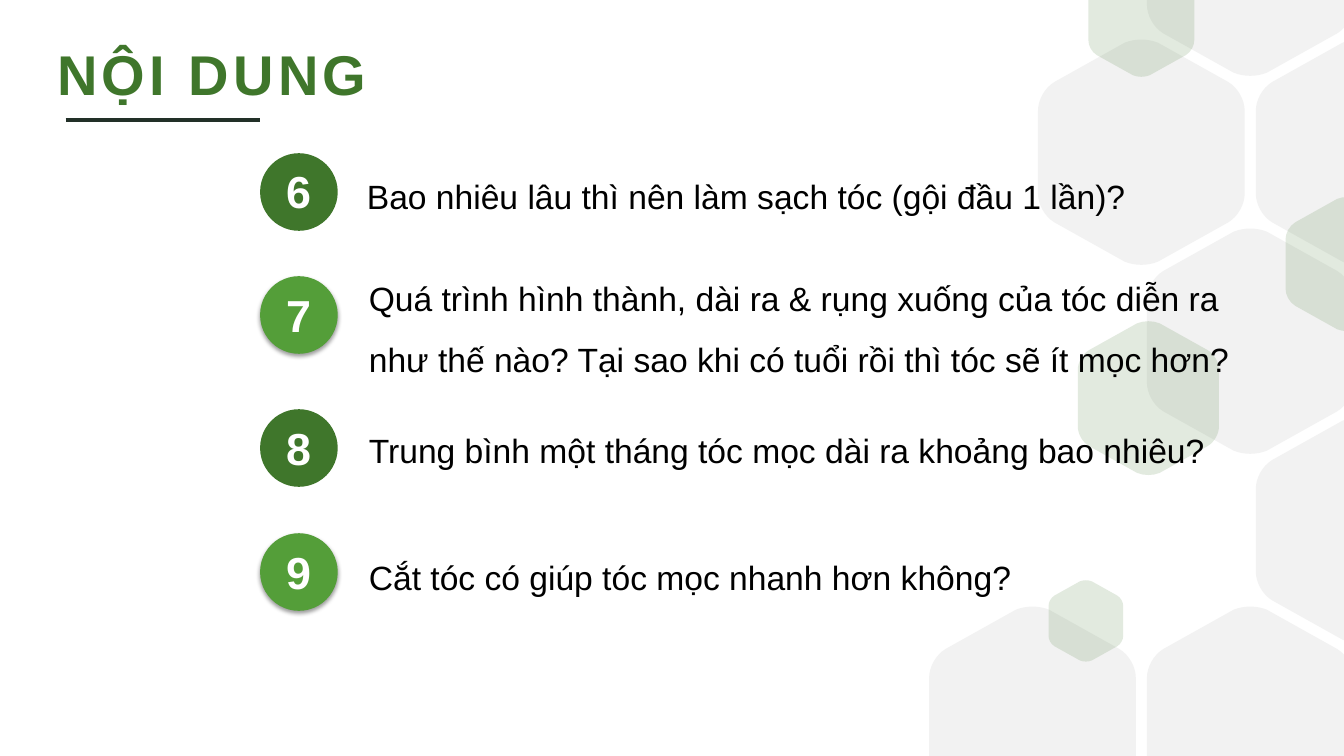
from dataclasses import dataclass

from lxml import etree
from pptx import Presentation
from pptx.dml.color import RGBColor
from pptx.enum.shapes import MSO_CONNECTOR, MSO_SHAPE
from pptx.enum.text import MSO_AUTO_SIZE
from pptx.oxml.ns import qn
from pptx.util import Inches, Pt

OVAL = MSO_SHAPE.OVAL
LINE = MSO_CONNECTOR.STRAIGHT
GROW = MSO_AUTO_SIZE.SHAPE_TO_FIT_TEXT


@dataclass(frozen=True)
class Theme:
    font: str = "Arial"
    dark: str = "3F762B"
    light: str = "549E39"
    rule: str = "223028"
    gray: str = "F2F2F2"
    white: str = "FFFFFF"
    black: str = "000000"
    title: int = 40
    number: int = 32
    body: int = 24


THEME = Theme()
WIDTH, HEIGHT = 13.33, 7.5

# Gray honeycomb cells: column, row
CELLS = [(0, 3), (2, 3), (3, 0), (2, -1), (2, 1), (1, 0), (3, 2)]
# Green hexagons: centre x, centre y, width
ACCENTS = [(13.36, 2.62, 1.22), (10.77, 6.16, 0.74),
           (11.32, 0.19, 1.05), (11.39, 3.95, 1.4)]

# Upper corners of a hexagon of width 1 around the origin, as curves
RIGHT = [(0.5, -0.2), (0.5, -0.25), (0.47, -0.31), (0.42, -0.34)]
PEAK = [(0.08, -0.53), (0.03, -0.55), (-0.03, -0.55), (-0.08, -0.53)]
LEFT = [(-x, y) for x, y in reversed(RIGHT)]
UPPER = [RIGHT, PEAK, LEFT]
LOWER = [[(-x, -y) for x, y in corner] for corner in UPPER]

# Number, badge top, text left, text top, text height, line spacing, question
ITEMS = [
    ("6", 1.52, 3.54, 1.7, 0.5, None,
     "Bao nhiêu lâu thì nên làm sạch tóc (gội đầu 1 lần)?"),
    ("7", 2.74, 3.56, 2.51, 1.24, 1.5,
     "Quá trình hình thành, dài ra & rụng xuống của tóc diễn ra như thế nào? "
     "Tại sao khi có tuổi rồi thì tóc sẽ ít mọc hơn?"),
    ("8", 4.06, 3.56, 4.22, 0.5, None,
     "Trung bình một tháng tóc mọc dài ra khoảng bao nhiêu?"),
    ("9", 5.29, 3.56, 5.36, 0.57, 1.3,
     "Cắt tóc có giúp tóc mọc nhanh hơn không?"),
]


def rgb(color):
    return RGBColor.from_string(color)


def paint(shape, color):
    shape.fill.solid()
    shape.fill.fore_color.rgb = rgb(color)
    shape.line.fill.background()
    shape.shadow.inherit = False


def bend(shape, count):
    """Turn the last three of every four lines into one curve."""
    track = next(shape._element.iter(qn("a:path")))
    lines = track.findall(qn("a:lnTo"))
    for i in range(0, 4 * count, 4):
        curve = etree.Element(qn("a:cubicBezTo"))
        lines[i + 1].addprevious(curve)
        for line in lines[i + 1:i + 4]:
            curve.append(line[0])
            track.remove(line)


def add_hex(group, cx, cy, width, color, alpha=None):
    """Draw a rounded hexagon, cut at the top and bottom of the slide."""
    corners, edge = UPPER + LOWER, None
    if cy + 0.55 * width > HEIGHT:
        corners, edge = UPPER, HEIGHT
    elif cy < 0.55 * width:
        corners, edge = LOWER, 0
    points = [(cx + x * width, cy + y * width)
              for corner in corners for x, y in corner]
    if edge is None:
        points.insert(0, points[-1])
    else:
        points = [(points[0][0], edge), *points, (points[-1][0], edge)]
    points = [(Inches(x), Inches(y)) for x, y in points]
    pen = group.shapes.build_freeform(*points[0])
    pen.add_line_segments(points[1:], close=True)
    shape = pen.convert_to_shape()
    bend(shape, len(corners))
    paint(shape, color)
    if alpha:
        clr = shape._element.spPr.find(f"{qn('a:solidFill')}/{qn('a:srgbClr')}")
        etree.SubElement(clr, qn("a:alpha"), val=str(alpha * 1000))


def add_comb(slide):
    """Put the honeycomb on the layout, behind the slide."""
    group = slide.shapes.add_group_shape()
    *first, last = [(10.24 + 1.08 * col, 1.51 + HEIGHT / 4 * row)
                    for col, row in CELLS]
    for cx, cy in first:
        add_hex(group, cx, cy, 2.05, THEME.gray)
    for cx, cy, width in ACCENTS:
        add_hex(group, cx, cy, width, THEME.dark, alpha=15)
    add_hex(group, *last, 2.05, THEME.gray)
    slide.slide_layout.shapes._spTree.append(group._element)


def add_shade(shape):
    effects = shape._element.spPr.find(qn("a:effectLst"))
    shade = etree.SubElement(
        effects, qn("a:outerShdw"), blurRad=str(Pt(3.1)), dist=str(Pt(1.6)),
        dir="5400000", algn="ctr", rotWithShape="0")
    clr = etree.SubElement(shade, qn("a:srgbClr"), val=THEME.black)
    etree.SubElement(clr, qn("a:alpha"), val="38000")


def add_text(slide, box, text, size, color, bold=False, lead=None, track=None):
    frame = slide.shapes.add_textbox(*map(Inches, box)).text_frame
    frame.word_wrap = True
    frame.auto_size = GROW
    para = frame.paragraphs[0]
    run = para.add_run()
    run.text = text
    if lead:
        para.line_spacing = lead
    if track:
        run._r.get_or_add_rPr().set("spc", str(track * 100))
    font = para.font
    font.name, font.size, font.bold = THEME.font, Pt(size), bold
    font.color.rgb = rgb(color)


def add_rule(slide, left, right, y):
    rule = slide.shapes.add_connector(
        LINE, Inches(left), Inches(y), Inches(right), Inches(y))
    rule.line.color.rgb = rgb(THEME.rule)
    rule.line.width = Pt(3)
    etree.SubElement(rule._element.spPr, qn("a:effectLst"))


def add_badge(slide, number, top, shaded):
    disc = slide.shapes.add_shape(
        OVAL, Inches(2.58), Inches(top), Inches(0.77), Inches(0.77))
    paint(disc, THEME.light if shaded else THEME.dark)
    if shaded:
        add_shade(disc)
    drop = 0.07 if shaded else 0.06
    add_text(slide, (2.74, top + drop, 0.55, 0.64), number,
             THEME.number, THEME.white, bold=True)


def main():
    deck = Presentation()
    deck.slide_width, deck.slide_height = Inches(WIDTH), Inches(HEIGHT)
    slide = deck.slides.add_slide(deck.slide_layouts[6])

    add_comb(slide)
    add_text(slide, (0.47, 0.34, 8.63, 0.77), "NỘI DUNG",
             THEME.title, THEME.dark, bold=True, track=3)
    add_rule(slide, 0.65, 2.58, 1.19)

    for i, (number, disc, left, top, height, lead, text) in enumerate(ITEMS):
        add_badge(slide, number, disc, shaded=i % 2 == 1)
        add_text(slide, (left, top, 8.79, height), text,
                 THEME.body, THEME.black, lead=lead)

    deck.save("out.pptx")


if __name__ == "__main__":
    main()
